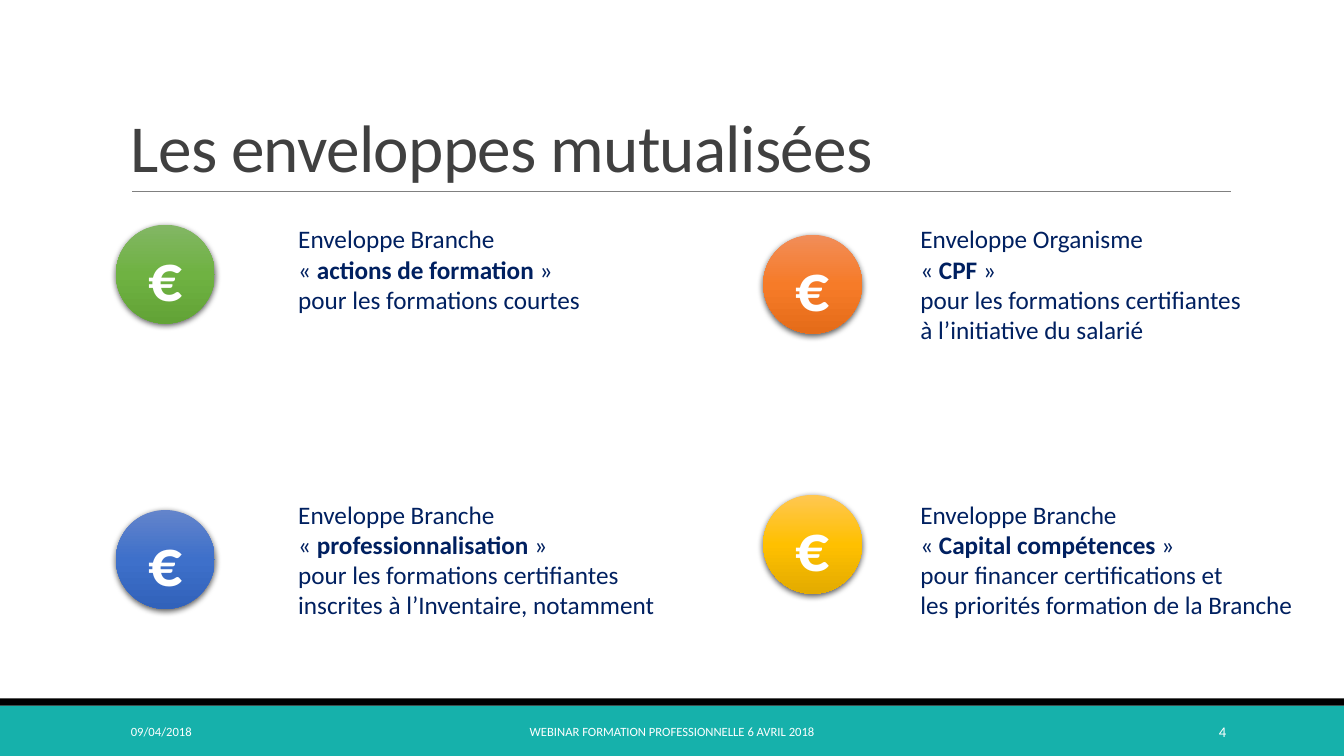
from copy import deepcopy

from lxml.etree import SubElement
from pptx import Presentation
from pptx.dml.color import RGBColor
from pptx.enum.shapes import MSO_CONNECTOR, MSO_SHAPE
from pptx.enum.text import MSO_ANCHOR, PP_ALIGN
from pptx.oxml.ns import qn
from pptx.util import Inches, Pt

COLORS = {
    "teal": "16B1AB", "black": "000000", "rule": "808080",
    "title": "404040", "navy": "002060", "white": "FFFFFF",
}
GRADIENTS = {
    "green": ("82B664", "6FB242", "62A336"),
    "blue": ("6384CB", "3E70CA", "3162BA"),
    "orange": ("F18D59", "F67B28", "E56C19"),
    "yellow": ("FFC752", "FFC000", "E3AB00"),
}
SLIDE_W, SLIDE_H = 13.33, 7.5
COIN = 0.98

# coin colour, coin left and top, text box, scheme owner, scheme name, purpose
ENVELOPES = [
    ("green", (1.15, 2.23), (2.86, 2.17, 3.46, 1.01), "Enveloppe Branche",
     "actions de formation", ["pour les formations courtes"]),
    ("blue", (1.15, 5.06), (2.86, 4.9, 3.77, 1.31), "Enveloppe Branche",
     "professionnalisation",
     ["pour les formations certifiantes", "inscrites à l’Inventaire, notamment"]),
    ("orange", (7.57, 2.33), (9.03, 2.17, 3.42, 1.31), "Enveloppe Organisme",
     "CPF", ["pour les formations certifiantes", "à l’initiative du salarié"]),
    ("yellow", (7.57, 4.91), (9.03, 4.9, 3.94, 1.31), "Enveloppe Branche",
     "Capital compétences",
     ["pour financer certifications et", "les priorités formation de la Branche"]),
]


def rgb(name):
    return RGBColor.from_string(COLORS[name])


def add_run(p, text, size, color, **font):
    r = p.add_run()
    r.text = text
    r.font.color.rgb = rgb(color)
    for key, value in {"name": "Calibri", "size": Pt(size), **font}.items():
        setattr(r.font, key, value)
    return r


def add_box(slide, box, anchor=MSO_ANCHOR.TOP, wrap=True):
    tf = slide.shapes.add_textbox(*map(Inches, box)).text_frame
    tf.word_wrap = wrap
    tf.vertical_anchor = anchor
    return tf


def add_line_of_text(slide, box, text, size, color, align, anchor=MSO_ANCHOR.MIDDLE):
    p = add_box(slide, box, anchor).paragraphs[0]
    p.alignment = align
    return p, add_run(p, text, size, color)


def add_title(slide, box, text):
    """Title sitting on a thin rule at the bottom of its box."""
    left, top, width, height = box
    bottom = top + height
    rule = slide.shapes.add_connector(
        MSO_CONNECTOR.STRAIGHT, Inches(left + 0.11), Inches(bottom),
        Inches(left + width + 0.01), Inches(bottom))
    rule.line.color.rgb = rgb("rule")
    rule.line.width = Pt(0.5)
    SubElement(rule._element.spPr, qn("a:effectLst"))
    p, r = add_line_of_text(slide, box, text, 48, "title", PP_ALIGN.LEFT, MSO_ANCHOR.BOTTOM)
    p.line_spacing = 0.85
    r.font._element.set("spc", "-50")


def add_footer(slide, top):
    for y, height, color in ((top, SLIDE_H - top, "teal"), (top - 0.07, 0.07, "black")):
        band = slide.shapes.add_shape(
            MSO_SHAPE.RECTANGLE, 0, Inches(y), Inches(SLIDE_W), Inches(height))
        band.shadow.inherit = False
        band.fill.solid()
        band.fill.fore_color.rgb = rgb(color)
        band.line.fill.background()
    for left, width, text, size, align in (
        (1.2, 2.7, "09/04/2018", 9, PP_ALIGN.LEFT),
        (4.03, 5.27, "WEBINAR FORMATION PROFESSIONNELLE 6 AVRIL 2018", 9, PP_ALIGN.CENTER),
        (10.83, 1.43, "4", 10.5, PP_ALIGN.RIGHT),
    ):
        add_line_of_text(slide, (left, top + 0.06, width, 0.4), text, size, "white", align)


def set_gradient(fill, colors):
    """Fill from top to bottom with three evenly spaced colours."""
    fill.gradient()
    fill.gradient_angle = 270
    first = fill.gradient_stops[0]._gs
    first.addnext(deepcopy(first))
    for i, (stop, color) in enumerate(zip(fill.gradient_stops, colors)):
        stop.color.rgb = RGBColor.from_string(color)
        stop.position = i / 2


def add_drop_shadow(sp):
    sp.shadow.inherit = False
    effects = sp._element.spPr.find(qn("a:effectLst"))
    shadow = SubElement(effects, qn("a:outerShdw"), blurRad=str(Pt(4.5)),
                        dist=str(Pt(1.5)), dir="5400000", algn="ctr", rotWithShape="0")
    color = SubElement(shadow, qn("a:srgbClr"), val=COLORS["black"])
    SubElement(color, qn("a:alpha"), val="63000")


def add_coin(slide, left, top, color):
    sp = slide.shapes.add_shape(
        MSO_SHAPE.OVAL, Inches(left), Inches(top), Inches(COIN), Inches(COIN))
    set_gradient(sp.fill, GRADIENTS[color])
    sp.line.fill.background()
    add_drop_shadow(sp)
    tf = sp.text_frame
    tf.vertical_anchor = MSO_ANCHOR.MIDDLE
    p = tf.paragraphs[0]
    p.alignment = PP_ALIGN.CENTER
    add_run(p, "€", 48, "white", bold=True)


def add_envelope(slide, color, coin_at, box, owner, name, purpose):
    add_coin(slide, *coin_at, color)
    tf = add_box(slide, box, wrap=False)
    lines = [[(owner, False)],
             [("« ", False), (name, True), (" »", False)],
             *([(text, False)] for text in purpose)]
    for i, line in enumerate(lines):
        p = tf.add_paragraph() if i else tf.paragraphs[0]
        p.alignment = PP_ALIGN.LEFT
        for text, bold in line:
            add_run(p, text, 18, "navy", bold=bold)


def main():
    prs = Presentation()
    prs.slide_width, prs.slide_height = Inches(SLIDE_W), Inches(SLIDE_H)
    slide = prs.slides.add_slide(prs.slide_layouts[6])
    add_footer(slide, 7)
    add_title(slide, (1.2, 0.31, 11, 1.59), "Les enveloppes mutualisées")
    for envelope in ENVELOPES:
        add_envelope(slide, *envelope)
    prs.save("out.pptx")


if __name__ == "__main__":
    main()
